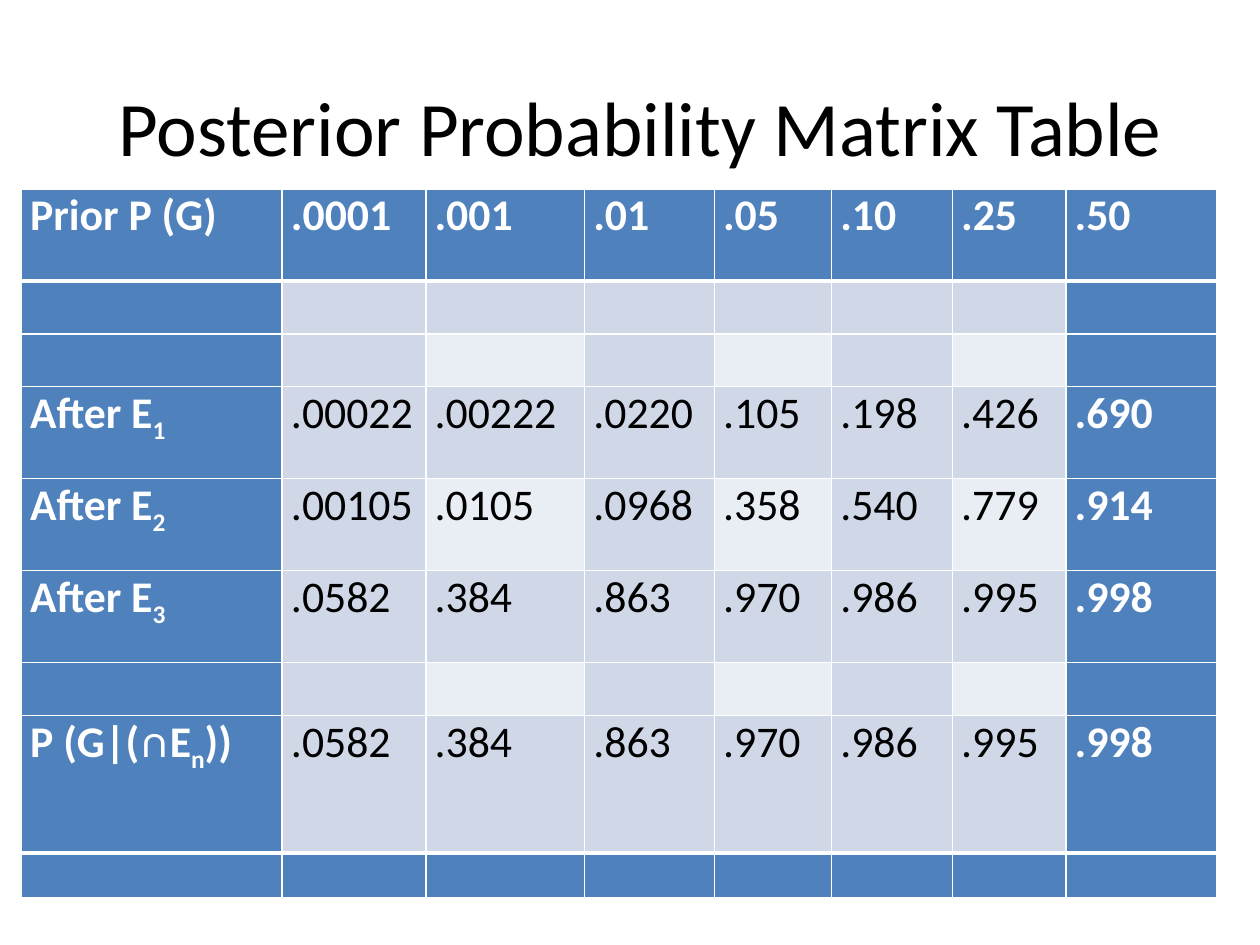
"""Build a slide with a table of posterior probabilities."""
from lxml.etree import SubElement
from pptx import Presentation
from pptx.dml.color import RGBColor
from pptx.enum.text import MSO_ANCHOR, PP_ALIGN
from pptx.oxml.ns import qn
from pptx.util import Inches, Pt

TITLE = "Posterior Probability Matrix Table"
FINAL = [".0582", ".384", ".863", ".970", ".986", ".995", ".998"]
# Each label alternates normal and subscript pieces.
ROWS = [
    (0.73, ["Prior P (G)"], [".0001", ".001", ".01", ".05", ".10", ".25", ".50"]),
    (0.42, [], []),
    (0.42, [], []),
    (0.73, ["After E", "1"], [".00022", ".00222", ".0220", ".105", ".198", ".426", ".690"]),
    (0.73, ["After E", "2"], [".00105", ".0105", ".0968", ".358", ".540", ".779", ".914"]),
    (0.73, ["After E", "3"], FINAL),
    (0.42, [], []),
    (1.09, ["P (G|(∩E", "n", "))"], FINAL),
    (0.36, [], []),
]
COLS = [2.07, 1.14, 1.26, 1.03, 0.93, 0.96, 0.9, 1.2]
BLUE, BAND, PALE, WHITE, BLACK = "4F81BD", "D0D8E8", "E9EDF4", "FFFFFF", "000000"
LAST_ROW, LAST_COL = len(ROWS) - 1, len(COLS) - 1


def color(value):
    return RGBColor.from_string(value)


def add_run(p, text, size, fill, bold=False, subscript=False):
    r = p.add_run()
    r.text = text
    r.font.name, r.font.size, r.font.bold = "Calibri", Pt(size), bold
    r.font.color.rgb = color(fill)
    if subscript:
        r.font._element.set("baseline", "-25000")


def add_borders(cell, row):
    heavy = {"T": row in (1, LAST_ROW), "B": row in (0, LAST_ROW - 1)}
    tc_pr = cell._tc.get_or_add_tcPr()
    for side in "LRTB":
        width = Pt(3 if heavy.get(side) else 1)
        line = SubElement(tc_pr, qn(f"a:ln{side}"), w=str(width))
        SubElement(SubElement(line, qn("a:solidFill")), qn("a:srgbClr"), val=WHITE)


def fill_cell(cell, row, col, pieces):
    edge = row in (0, LAST_ROW) or col in (0, LAST_COL)
    pale = row % 2 == 0 and col % 2 == 0
    cell.margin_left = cell.margin_right = Inches(0.07)
    cell.margin_top = cell.margin_bottom = 0
    add_borders(cell, row)
    cell.fill.solid()
    cell.fill.fore_color.rgb = color(BLUE if edge else PALE if pale else BAND)
    for i, text in enumerate(pieces):
        add_run(cell.text_frame.paragraphs[0], text, 25,
                WHITE if edge else BLACK, edge, i % 2 == 1)


def add_title(s):
    tf = s.shapes.add_textbox(Inches(0.5), Inches(0.5), Inches(9.17), Inches(1)).text_frame
    tf.word_wrap = True
    tf.vertical_anchor = MSO_ANCHOR.MIDDLE
    p = tf.paragraphs[0]
    p.alignment = PP_ALIGN.CENTER
    add_run(p, TITLE, 44, BLACK)


def add_matrix(s):
    heights = [height for height, _, _ in ROWS]
    table = s.shapes.add_table(len(ROWS), len(COLS), Inches(0.17), Inches(1.5),
                               Inches(sum(COLS)), Inches(sum(heights))).table
    for column, width in zip(table.columns, COLS):
        column.width = Inches(width)
    for row, (height, label, values) in enumerate(ROWS):
        table.rows[row].height = Inches(height)
        texts = [label] + ([[v] for v in values] or [[]] * LAST_COL)
        for col, pieces in enumerate(texts):
            fill_cell(table.cell(row, col), row, col, pieces)


def main():
    prs = Presentation()
    prs.slide_width, prs.slide_height = Inches(10), Inches(7.5)
    s = prs.slides.add_slide(prs.slide_layouts[6])
    add_title(s)
    add_matrix(s)
    prs.save("out.pptx")


if __name__ == "__main__":
    main()
